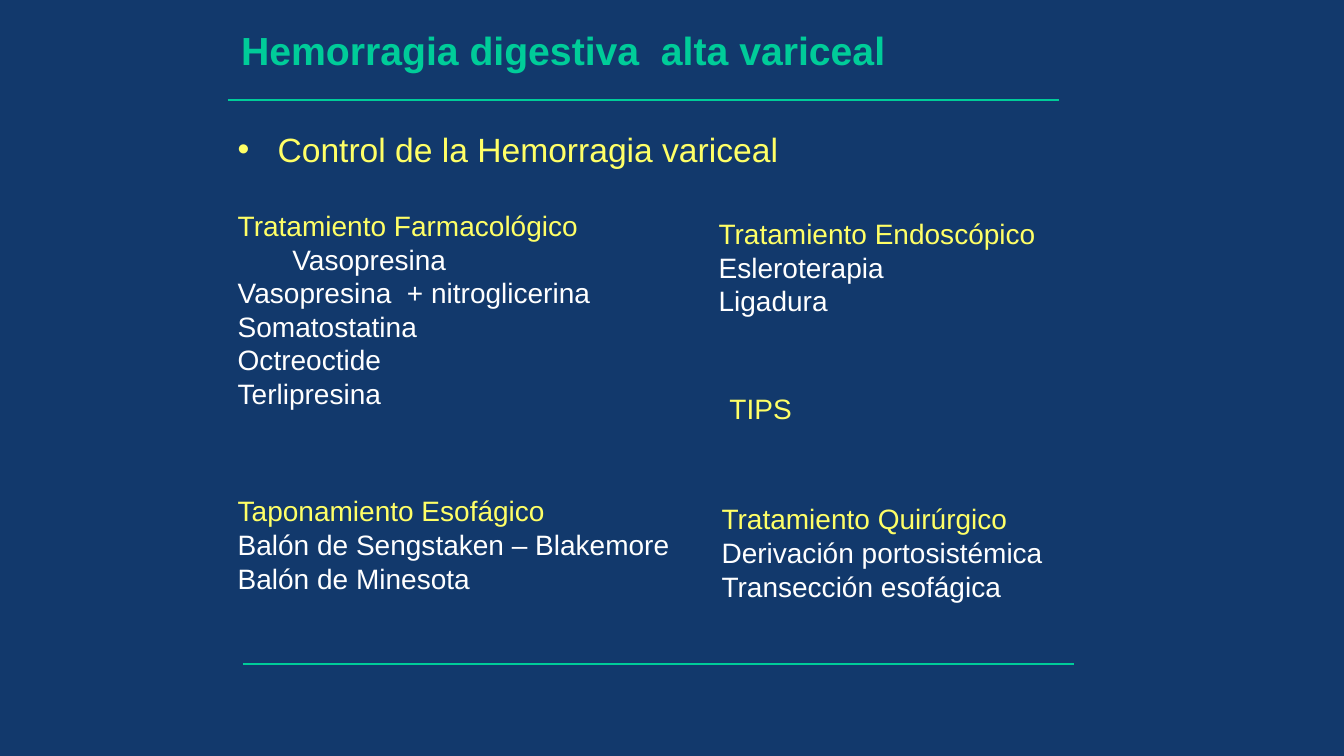
from lxml.etree import SubElement
from pptx import Presentation
from pptx.dml.color import RGBColor
from pptx.enum.shapes import MSO_CONNECTOR
from pptx.enum.text import MSO_ANCHOR, MSO_AUTO_SIZE, PP_ALIGN
from pptx.oxml.ns import qn
from pptx.util import Pt

COLORS = {"background": "12396C", "accent": "00CC99", "heading": "FFFF66", "item": "FFFFFF"}
FONT = "Arial"
LINE_FACTOR = 1.2
RULE_LENGTH = 594
HEADING_SIZE = 20

# Left, top, width, heading and items of each treatment group
TREATMENTS = [
    (162.7, 145.4, 278, "Tratamiento Farmacológico",
     ["Vasopresina", "Vasopresina  + nitroglicerina", "Somatostatina",
      "Octreoctide", "Terlipresina"]),
    (162.7, 349.2, 354, "Taponamiento Esofágico",
     ["Balón de Sengstaken – Blakemore", "Balón de Minesota"]),
    (506.2, 151.2, 302, "Tratamiento Endoscópico", ["Esleroterapia", "Ligadura"]),
    (514, 275.8, 261, "TIPS", []),
    (508.3, 355, 306, "Tratamiento Quirúrgico",
     ["Derivación portosistémica", "Transección esofágica"]),
]
ITEM_INDENTS = {"Vasopresina": 39}


def rgb(name):
    return RGBColor.from_string(COLORS[name])


def write(paragraph, text, size=HEADING_SIZE, color="item", bold=False, indent=0, bullet=None):
    """Fill a paragraph; with a bullet, the indent is the hanging distance."""
    run = paragraph.add_run()
    run.text = text
    run.font.name = FONT
    run.font.size = Pt(size)
    run.font.bold = bold
    run.font.color.rgb = rgb(color)
    paragraph.alignment = PP_ALIGN.LEFT
    paragraph.line_spacing = Pt(size * LINE_FACTOR)
    paragraph.space_before = Pt(0)
    properties = paragraph._p.get_or_add_pPr()
    properties.set("marL", str(Pt(indent)))
    properties.set("indent", str(Pt(-indent if bullet else 0)))
    if bullet:
        SubElement(properties, qn("a:buFont"), typeface=FONT)
        SubElement(properties, qn("a:buChar"), char=bullet)


def prepare_frame(frame):
    frame.word_wrap = True
    frame.auto_size = MSO_AUTO_SIZE.NONE
    frame.vertical_anchor = MSO_ANCHOR.TOP
    return frame


def add_frame(slide, left, top, width, height):
    return prepare_frame(slide.shapes.add_textbox(
        Pt(left), Pt(top), Pt(width), Pt(height)).text_frame)


def add_title(slide, left, top, width, height):
    title = slide.shapes.title
    title.left, title.top, title.width, title.height = map(Pt, (left, top, width, height))
    frame = prepare_frame(title.text_frame)
    write(frame.paragraphs[0], "Hemorragia digestiva  alta variceal",
          size=28, color="accent", bold=True)


def add_rule(slide, left, top):
    rule = slide.shapes.add_connector(
        MSO_CONNECTOR.STRAIGHT, Pt(left), Pt(top), Pt(left + RULE_LENGTH), Pt(top))
    rule.line.color.rgb = rgb("accent")
    rule.line.width = Pt(1.5)
    SubElement(rule._element.spPr, qn("a:effectLst"))


def add_subtitle(slide, left, top, width, height):
    frame = add_frame(slide, left, top, width, height)
    write(frame.paragraphs[0], "Control de la Hemorragia variceal",
          size=24, color="heading", indent=28.5, bullet="•")


def add_treatment(slide, left, top, width, heading, items):
    height = (1 + len(items)) * HEADING_SIZE * LINE_FACTOR + 7.2
    frame = add_frame(slide, left, top, width, height)
    write(frame.paragraphs[0], heading, color="heading")
    for item in items:
        write(frame.add_paragraph(), item, indent=ITEM_INDENTS.get(item, 0))


def build_slide(presentation):
    slide = presentation.slides.add_slide(presentation.slide_layouts[5])
    slide.background.fill.solid()
    slide.background.fill.fore_color.rgb = rgb("background")
    add_title(slide, 165, 15.1, 621, 41)
    add_rule(slide, 162.7, 71.3)
    add_subtitle(slide, 162.7, 88.6, 510, 36)
    for treatment in TREATMENTS:
        add_treatment(slide, *treatment)
    add_rule(slide, 173.5, 474.5)


def main():
    presentation = Presentation()
    presentation.slide_width, presentation.slide_height = Pt(960), Pt(540)
    build_slide(presentation)
    presentation.save("out.pptx")


if __name__ == "__main__":
    main()
